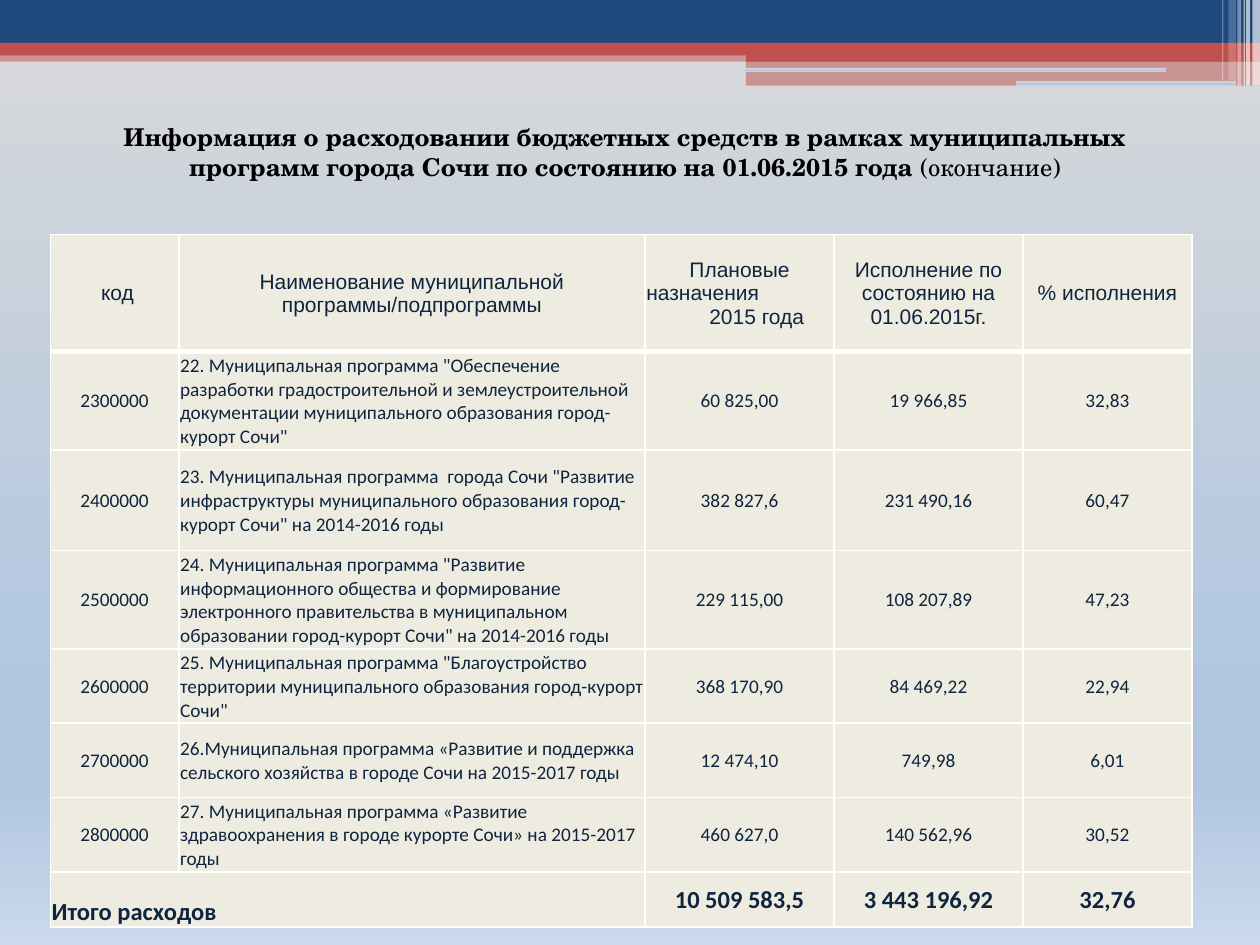
from lxml import etree
from pptx import Presentation
from pptx import util as u
from pptx.dml import color
from pptx.enum import shapes, text
from pptx.oxml import ns

GRADIENT = [(0, "D9D9D9"), (74, "B0C6E1"), (83, "B0C6E1"), (100, "CAD9EB")]
NAVY, RED, WHITE = "1F497D", "C0504D", "FFFFFF"
CELL_FILL, TABLE_TEXT = "EEECE1", "0F243E"
LEFT, CENTER = text.PP_ALIGN.LEFT, text.PP_ALIGN.CENTER

BANDS = [
    (0, 0.4, 10, 0.09, RED, 50),
    (0, 0, 10, 0.34, NAVY, 100),
    (0, 0.34, 10, 0.1, RED, 100),
    (5.92, 0.39, 4.08, 0.1, RED, 100),
    (5.92, 0.48, 4.08, 0.2, RED, 50),
]
SLOTS = [(5.91, 0.54, 3.35, 0.03), (8.06, 0.64, 1.75, 0.04)]
STRIPES = [
    (9.94, 0.06, 0.68, 65),
    (9.89, 0.03, 0.68, 65),
    (9.87, 0.01, 0.68, 60),
    (9.82, 0.03, 0.68, 40),
    (9.75, 0.06, 0.64, 20),
    (9.7, 0.01, 0.64, 30),
]

COLUMN_WIDTHS = [1.02, 3.7, 1.5, 1.5, 1.34]
ROW_HEIGHTS = [0.93, 0.78, 0.8, 0.78, 0.59, 0.59, 0.59, 0.44]
HEADER = [
    " код",
    "Наименование муниципальной программы/подпрограммы",
    "Плановые\nназначения\n2015 года",
    "Исполнение по состоянию на 01.06.2015г.",
    "% исполнения",
]
PROGRAMS = [
    ("2300000", '22. Муниципальная программа "Обеспечение разработки градостроительной и '
     'землеустроительной документации муниципального образования город-курорт Сочи"',
     "60 825,00", "19 966,85", "32,83"),
    ("2400000", '23. Муниципальная программа  города Сочи "Развитие инфраструктуры '
     'муниципального образования город-курорт Сочи" на 2014-2016 годы',
     "382 827,6", "231 490,16", "60,47"),
    ("2500000", '24. Муниципальная программа "Развитие информационного общества и формирование '
     'электронного правительства в муниципальном образовании город-курорт Сочи" на 2014-2016 годы',
     "229 115,00", "108 207,89", "47,23"),
    ("2600000", '25. Муниципальная программа "Благоустройство территории муниципального '
     'образования город-курорт Сочи"',
     "368 170,90", "84 469,22", "22,94"),
    ("2700000", "26.Муниципальная программа «Развитие и поддержка сельского хозяйства "
     "в городе Сочи на 2015-2017 годы",
     "12 474,10", "749,98", "6,01"),
    ("2800000", "27. Муниципальная программа «Развитие здравоохранения в городе курорте Сочи» "
     "на 2015-2017 годы",
     "460 627,0", "140 562,96", "30,52"),
]
TOTAL = ("Итого расходов", "", "10 509 583,5", "3 443 196,92", "32,76")


def rgb(value):
    return color.RGBColor.from_string(value)


def add_child(parent, tag, **attributes):
    return etree.SubElement(parent, ns.qn(tag), attributes)


def fill_gradient(fill, element):
    fill.gradient()
    fill.gradient_angle = 270
    stops = element.find(".//" + ns.qn("a:gsLst"))
    for stop in list(stops):
        stops.remove(stop)
    for position, value in GRADIENT:
        stop = add_child(stops, "a:gs", pos=str(position * 1000))
        add_child(stop, "a:srgbClr", val=value)


def add_block(slide, kind, left, top, width, height):
    shape = slide.shapes.add_shape(
        kind, u.Inches(left), u.Inches(top), u.Inches(width), u.Inches(height))
    shape.shadow.inherit = False
    shape.line.fill.background()
    return shape


def add_band(slide, left, top, width, height, value, opacity):
    shape = add_block(slide, shapes.MSO_SHAPE.RECTANGLE, left, top, width, height)
    shape.fill.solid()
    shape.fill.fore_color.rgb = rgb(value)
    if opacity < 100:
        solid = shape.element.spPr.find(ns.qn("a:solidFill"))
        add_child(solid[0], "a:alpha", val=str(opacity * 1000))


def add_slot(slide, left, top, width, height):
    shape = add_block(slide, shapes.MSO_SHAPE.ROUNDED_RECTANGLE, left, top, width, height)
    fill_gradient(shape.fill, shape.element)


def add_title(slide):
    box = slide.shapes.add_textbox(u.Inches(0.51), u.Inches(0.92), u.Inches(8.9), u.Inches(0.57))
    frame = box.text_frame
    frame.word_wrap = True
    frame.auto_size = text.MSO_AUTO_SIZE.SHAPE_TO_FIT_TEXT
    paragraph = frame.paragraphs[0]
    paragraph.alignment = CENTER
    parts = [
        ("Информация о расходовании бюджетных средств в рамках муниципальных программ "
         "города Сочи по состоянию на 01.06.2015 года ", True),
        ("(окончание)", False),
    ]
    for words, bold in parts:
        run = paragraph.add_run()
        run.text = words
        run.font.size = u.Pt(14)
        run.font.name = "TeX Gyre Schola"
        run.font.bold = bold
        run.font.color.rgb = rgb("000000")


def set_borders(cell, bottom):
    properties = cell._tc.get_or_add_tcPr()
    widths = [("a:lnL", 1), ("a:lnR", 1), ("a:lnT", 1), ("a:lnB", bottom)]
    for index, (tag, width) in enumerate(widths):
        line = etree.Element(ns.qn(tag), w=str(u.Pt(width)))
        add_child(add_child(line, "a:solidFill"), "a:srgbClr", val=WHITE)
        properties.insert(index, line)


def fill_cell(cell, words, alignment, size, font_name, bold, bottom_border):
    cell.text = words
    cell.margin_left = cell.margin_right = cell.margin_top = u.Inches(0.01)
    cell.margin_bottom = 0
    cell.vertical_anchor = text.MSO_ANCHOR.MIDDLE
    cell.fill.solid()
    cell.fill.fore_color.rgb = rgb(CELL_FILL)
    for paragraph in cell.text_frame.paragraphs:
        paragraph.alignment = alignment
        paragraph.font.size = u.Pt(size)
        paragraph.font.name = font_name
        paragraph.font.bold = bold
        paragraph.font.color.rgb = rgb(TABLE_TEXT)
    set_borders(cell, bottom_border)


def stagger_plan_header(cell):
    _, middle, last = cell.text_frame.paragraphs
    for paragraph, indent in [(middle, 0), (last, 0.5)]:
        paragraph.alignment = LEFT
        paragraph._p.get_or_add_pPr().set("marL", str(u.Inches(indent)))


def add_budget_table(slide):
    rows = [HEADER, *PROGRAMS, TOTAL]
    frame = slide.shapes.add_table(
        len(rows), len(COLUMN_WIDTHS), u.Inches(0.4), u.Inches(1.86),
        u.Inches(sum(COLUMN_WIDTHS)), u.Inches(sum(ROW_HEIGHTS)))
    table = frame.table
    for column, width in zip(table.columns, COLUMN_WIDTHS):
        column.width = u.Inches(width)
    for row, height in zip(table.rows, ROW_HEIGHTS):
        row.height = u.Inches(height)
    last = len(rows) - 1
    for row_index, values in enumerate(rows):
        if row_index == 0:
            style = (12, "Arial", False, 3)
        elif row_index == last:
            style = (14, "Calibri", True, 1)
        else:
            style = (11, "Calibri", False, 1)
        name_column = 0 if row_index == last else 1
        for column_index, words in enumerate(values):
            is_name = row_index > 0 and column_index == name_column
            fill_cell(table.cell(row_index, column_index), words,
                      LEFT if is_name else CENTER, *style)
    stagger_plan_header(table.cell(0, 2))
    total_label = table.cell(last, 0)
    total_label.merge(table.cell(last, 1))
    total_label.vertical_anchor = text.MSO_ANCHOR.BOTTOM


def main():
    presentation = Presentation()
    presentation.slide_width = u.Inches(10)
    presentation.slide_height = u.Inches(7.5)
    slide = presentation.slides.add_slide(presentation.slide_layouts[6])
    fill_gradient(slide.background.fill, slide.element)
    for band in BANDS:
        add_band(slide, *band)
    for slot in SLOTS:
        add_slot(slide, *slot)
    for left, width, height, opacity in STRIPES:
        add_band(slide, left, 0, width, height, WHITE, opacity)
    add_budget_table(slide)
    add_title(slide)
    presentation.save("out.pptx")


if __name__ == "__main__":
    main()
